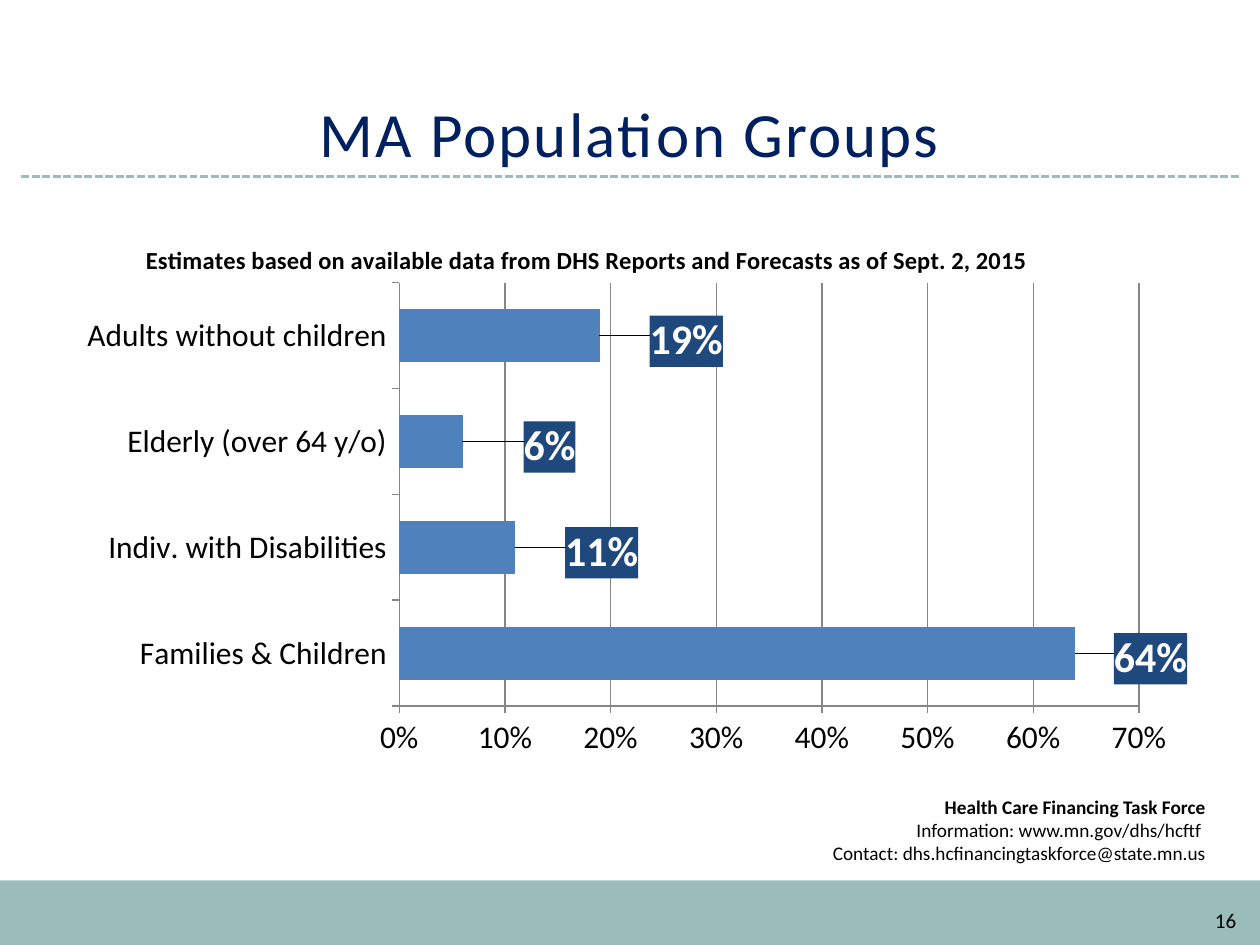
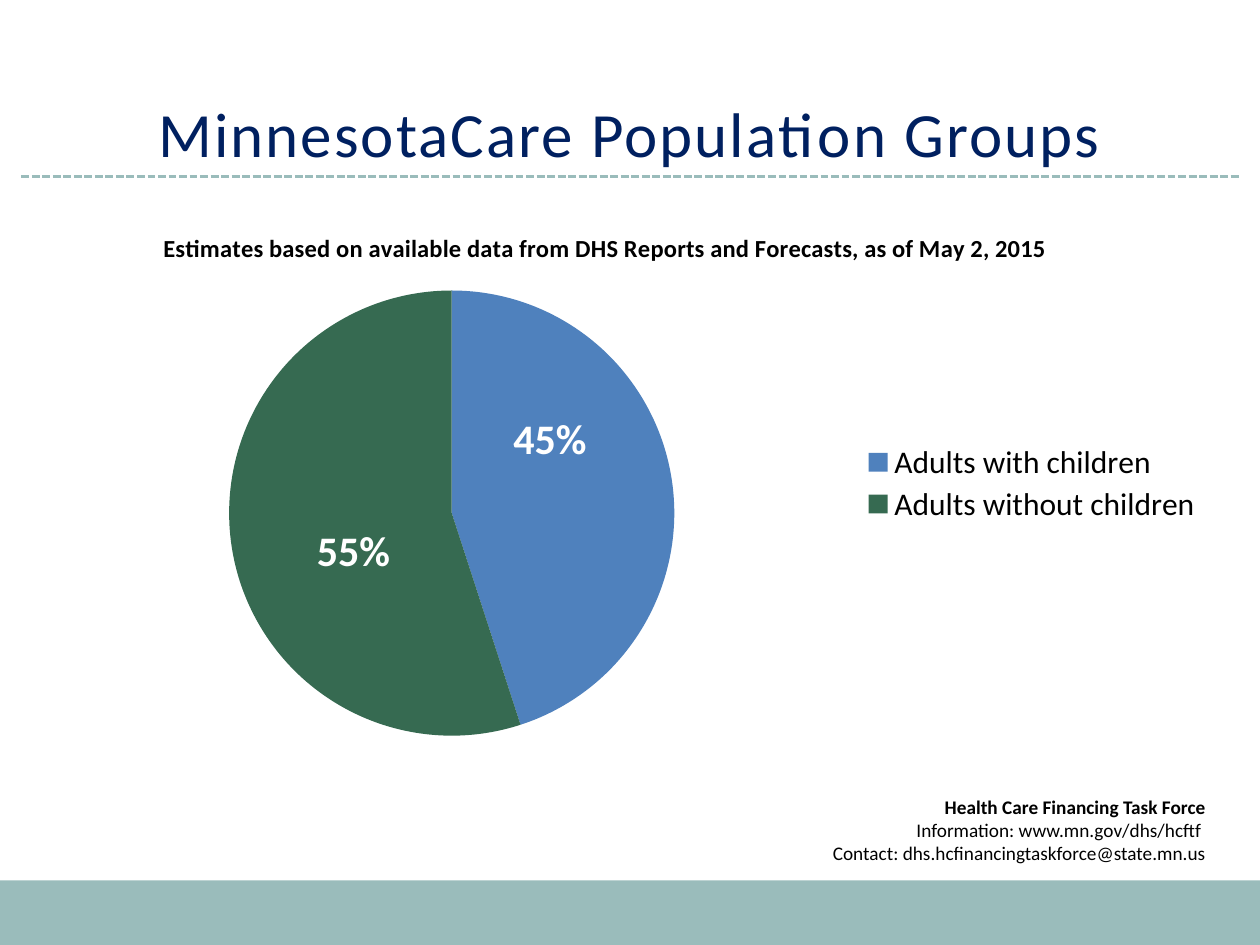
import pptx
import pptx.chart.data
import pptx.dml.color
import pptx.enum.chart
import pptx.enum.dml
import pptx.enum.shapes
import pptx.enum.text
import pptx.oxml
import pptx.oxml.ns
import pptx.util

Cm, Pt = pptx.util.Cm, pptx.util.Pt
RGB = pptx.dml.color.RGBColor.from_string
qn = pptx.oxml.ns.qn
XL = pptx.enum.chart
ALIGN = pptx.enum.text.PP_ALIGN
ANCHOR = pptx.enum.text.MSO_ANCHOR

COLORS = {
    "band": "9ABCBB", "title": "002060", "text": "000000", "white": "FFFFFF",
    "blue": "4F81BD", "green": "366A51", "label": "1F497D", "grid": "868686",
}
FONT = "Calibri"
FORMATS = {
    "title": {"size": Pt(36), "color": "title"},
    "footer": {"size": Pt(11), "color": "text", "bold": False},
    "footer_head": {"size": Pt(11), "color": "text", "bold": True},
    "number": {"size": Pt(12), "color": "text"},
    "chart": {"size": Pt(18), "color": "text"},
    "chart_title": {"size": Pt(14), "color": "text", "bold": True},
    "value": {"size": Pt(24), "color": "white", "bold": True},
}
FOOTER = [
    ("Health Care Financing Task Force", "footer_head"),
    ("Information: www.mn.gov/dhs/hcftf ", "footer"),
    ("Contact: dhs.hcfinancingtaskforce@state.mn.us", "footer"),
]
SLIDES = [
    {
        "title": "MA Population Groups",
        "number": "16",
        "type": XL.XL_CHART_TYPE.BAR_CLUSTERED,
        "box": (1.27, 4.24, 22.66, 11.23),
        "chart_title": "Estimates based on available data from DHS Reports and Forecasts as of Sept. 2, 2015",
        "title_at": (0.07, 0.05),
        "plot_at": (0.3, 0.13, 0.66, 0.76),
        "data": [("Families & Children", 0.64), ("Indiv. with Disabilities", 0.11),
                 ("Elderly (over 64 y/o)", 0.06), ("Adults without children", 0.19)],
        "colors": ["blue"] * 4,
        "label_pos": XL.XL_LABEL_POSITION.OUTSIDE_END,
        "label_fill": "label",
        "label_shift": [(0.03, 0.01), (0.04, 0.01), (0.05, 0.01), (0.04, 0.01)],
    },
    {
        "title": "MinnesotaCare Population Groups",
        "type": XL.XL_CHART_TYPE.PIE,
        "box": (0.84, 4.24, 23.62, 11),
        "chart_title": "Estimates based on available data from DHS Reports and Forecasts, as of May 2, 2015",
        "title_at": (0.1, 0.03),
        "plot_at": (0.16, 0.14, 0.38, 0.83),
        "legend_at": (0.7, 0.42, 0.29, 0.16),
        "data": [("Adults with children", 0.45), ("Adults without children", 0.55)],
        "colors": ["blue", "green"],
        "label_pos": XL.XL_LABEL_POSITION.CENTER,
        "label_shift": [(-0.01, -0.1), (0.01, 0.04)],
    },
]


def style(font, name):
    font.name = FONT
    for key, value in FORMATS[name].items():
        if key == "color":
            font.color.rgb = RGB(COLORS[value])
        else:
            setattr(font, key, value)


def rect(slide, box, color):
    sp = slide.shapes.add_shape(pptx.enum.shapes.MSO_SHAPE.RECTANGLE, *map(Cm, box))
    sp.shadow.inherit = False
    sp.fill.solid()
    sp.fill.fore_color.rgb = RGB(COLORS[color])
    sp.line.fill.background()
    return sp


def write(sp, lines, align, anchor):
    tf = sp.text_frame
    tf.word_wrap = True
    tf.vertical_anchor = anchor
    for i, (text, name) in enumerate(lines):
        p = tf.add_paragraph() if i else tf.paragraphs[0]
        p.alignment = align
        r = p.add_run()
        r.text = text
        style(r.font, name)
    return tf.paragraphs[0]


def text_box(slide, box, text, name, align, anchor):
    return write(slide.shapes.add_textbox(*map(Cm, box)), [(text, name)], align, anchor)


def xml(tag, parent=None, **attrs):
    el = pptx.oxml.parse_xml(f'<{tag} {pptx.oxml.ns.nsdecls("c", "a")}/>')
    for key, value in attrs.items():
        el.set(key, str(value))
    if parent is not None:
        parent.append(el)
    return el


def set_layout(parent, index, values, edge=True, inner=False):
    old = parent.find(qn("c:layout"))
    if old is not None:
        parent.remove(old)
    layout = xml("c:layout")
    manual = xml("c:manualLayout", layout)
    if inner:
        xml("c:layoutTarget", manual, val="inner")
    if edge:
        for key in ("xMode", "yMode"):
            xml(f"c:{key}", manual, val="edge")
    for key, value in zip("xywh", values):
        xml(f"c:{key}", manual, val=value)
    parent.insert(index, layout)


def add_frame(slide, title):
    rect(slide, (0, 17.75, 25.4, 1.3), "band")
    line = slide.shapes.add_connector(pptx.enum.shapes.MSO_CONNECTOR.STRAIGHT,
                                      Cm(0.43), Cm(3.56), Cm(24.97), Cm(3.56))
    line.line.color.rgb = RGB(COLORS["band"])
    line.line.width = Pt(1.5)
    line.line.dash_style = pptx.enum.dml.MSO_LINE.SQUARE_DOT
    xml("a:effectLst", line.element.spPr)
    write(rect(slide, (11.53, 15.9, 13.03, 1.7), "white"), FOOTER, ALIGN.RIGHT, ANCHOR.TOP)
    p = text_box(slide, (0.84, 0.64, 23.7, 2.92), title, "title", ALIGN.CENTER, ANCHOR.BOTTOM)
    p.line_spacing = Pt(40)
    p.runs[0].font._element.set("spc", "120")


def style_axes(chart):
    for axis in (chart.category_axis, chart.value_axis):
        axis.major_tick_mark = XL.XL_TICK_MARK.OUTSIDE
        axis.minor_tick_mark = XL.XL_TICK_MARK.NONE
        axis.format.line.color.rgb = RGB(COLORS["grid"])
        style(axis.tick_labels.font, "chart")
    axis.minimum_scale, axis.maximum_scale, axis.major_unit = 0, 0.7, 0.1
    axis.tick_labels.number_format = "0%"
    axis.tick_labels.number_format_is_linked = False
    axis.has_major_gridlines = True
    axis.major_gridlines.format.line.color.rgb = RGB(COLORS["grid"])
    chart.plots[0].gap_width = 100


def add_labels(chart, item):
    series = chart.plots[0].series[0]
    labels = series.data_labels
    labels.show_value = True
    labels.number_format = "0%"
    labels.number_format_is_linked = False
    style(labels.font, "value")
    for i, color in enumerate(item["colors"]):
        point = series.points[i]
        point.format.fill.solid()
        point.format.fill.fore_color.rgb = RGB(COLORS[color])
        style(point.data_label.font, "value")
        point.data_label.position = item["label_pos"]
    for el, shift in zip(chart.element.iter(qn("c:dLbl")), item["label_shift"]):
        set_layout(el, 1, shift, edge=False)
        if "label_fill" in item:
            old = el.find(qn("c:spPr"))
            if old is not None:
                el.remove(old)
            props = xml("c:spPr")
            xml("a:srgbClr", xml("a:solidFill", props), val=COLORS[item["label_fill"]])
            el.find(qn("c:txPr")).addprevious(props)


def add_chart(slide, item):
    data = pptx.chart.data.CategoryChartData(number_format="0%")
    data.categories = [name for name, _ in item["data"]]
    data.add_series("Series 1", [value for _, value in item["data"]])
    chart = slide.shapes.add_chart(item["type"], *map(Cm, item["box"]), data).chart
    style(chart.font, "chart")
    chart.has_title = True
    r = chart.chart_title.text_frame.paragraphs[0].add_run()
    r.text = item["chart_title"]
    style(r.font, "chart_title")
    set_layout(chart.chart_title._element, 1, item["title_at"])
    chart.plots[0].vary_by_categories = item["type"] == XL.XL_CHART_TYPE.PIE
    chart.has_legend = "legend_at" in item
    if chart.has_legend:
        chart.legend.position = XL.XL_LEGEND_POSITION.RIGHT
        chart.legend.include_in_layout = False
        style(chart.legend.font, "chart")
        set_layout(chart.legend._element, 1, item["legend_at"])
    else:
        style_axes(chart)
    add_labels(chart, item)
    set_layout(next(chart.element.iter(qn("c:plotArea"))), 0, item["plot_at"], inner=True)


def main():
    prs = pptx.Presentation()
    prs.slide_width, prs.slide_height = Cm(25.4), Cm(19.05)
    for item in SLIDES:
        s = prs.slides.add_slide(prs.slide_layouts[6])
        add_frame(s, item["title"])
        add_chart(s, item)
        if "number" in item:
            text_box(s, (19.25, 18.03, 5.92, 1.02), item["number"], "number",
                     ALIGN.RIGHT, ANCHOR.MIDDLE)
    prs.save("out.pptx")


if __name__ == "__main__":
    main()
